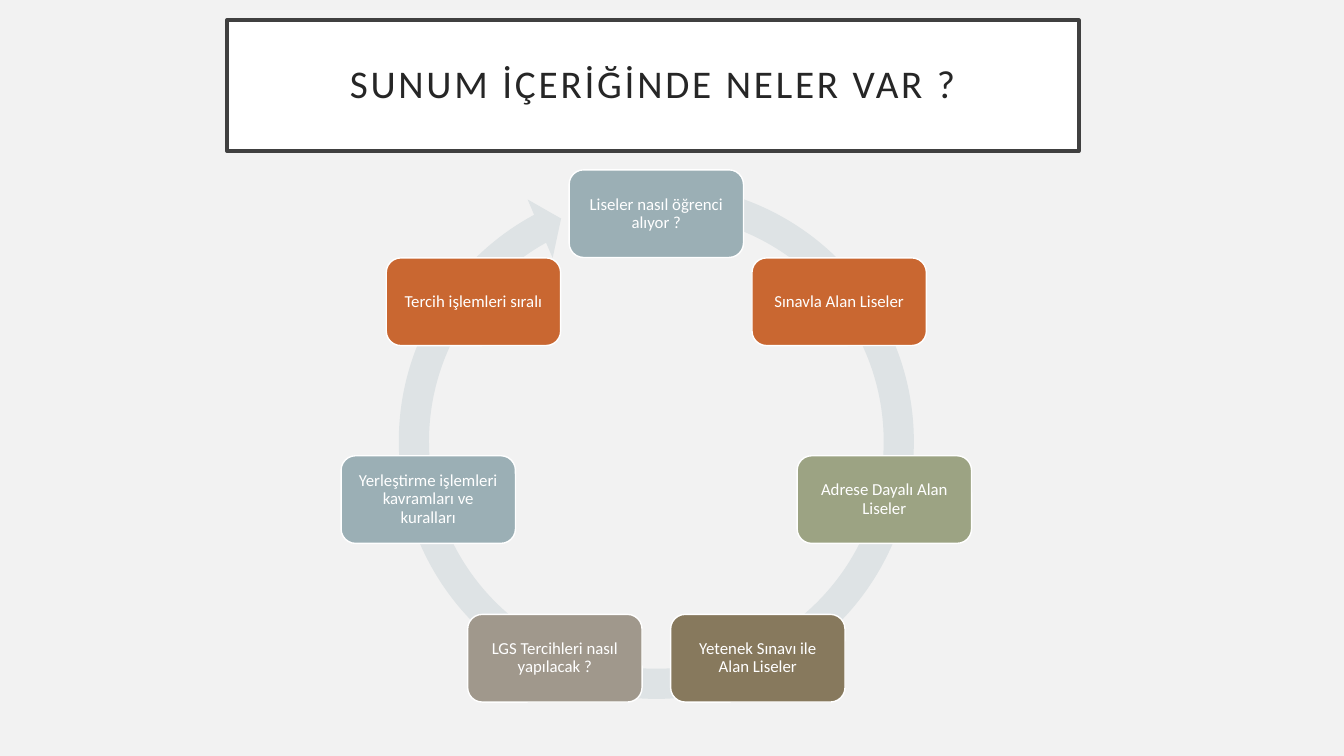
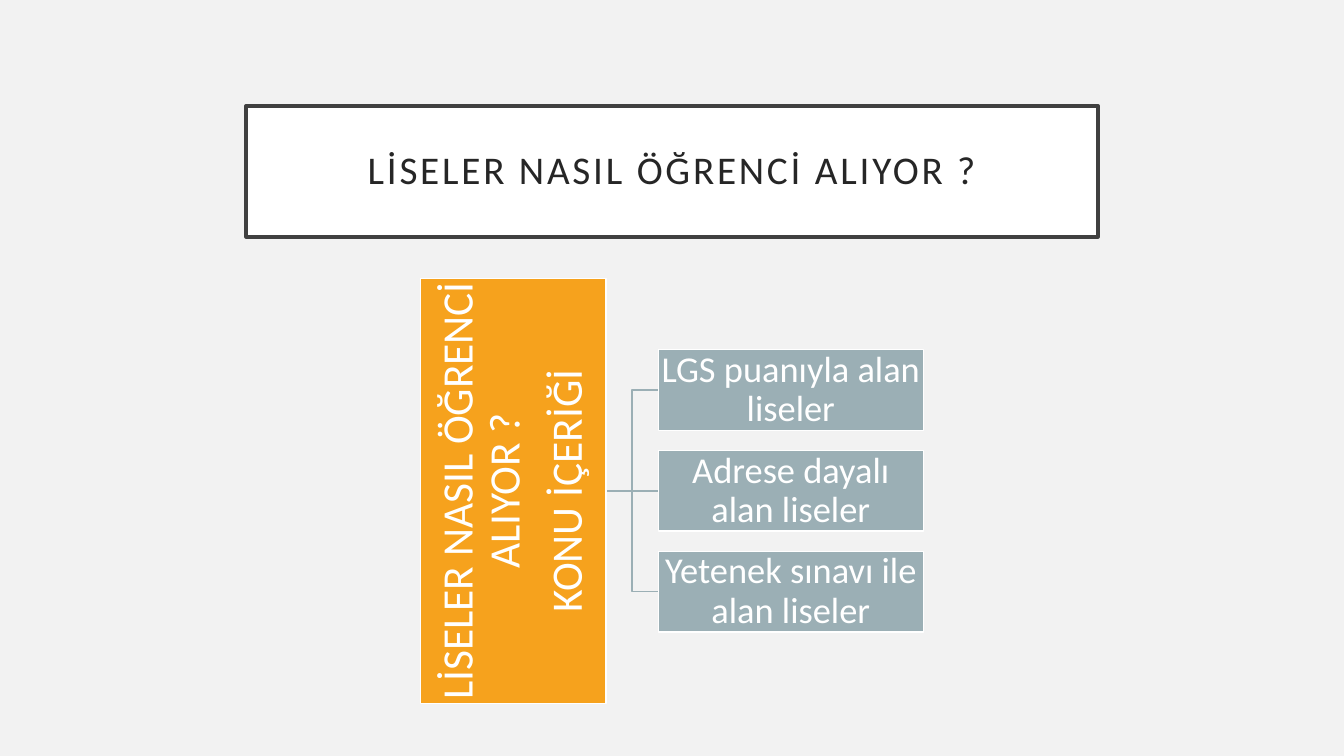
import math

from lxml import etree
from pptx import Presentation
from pptx.dml.color import RGBColor
from pptx.enum import shapes, text
from pptx.oxml import ns
from pptx.util import Inches, Pt

# Palette
PAPER = RGBColor(0xF2, 0xF2, 0xF2)
WHITE = RGBColor(0xFF, 0xFF, 0xFF)
FRAME = RGBColor(0x40, 0x40, 0x40)
INK = RGBColor(0x26, 0x26, 0x26)
RING = RGBColor(0xDE, 0xE3, 0xE5)
BLUE = RGBColor(0x9B, 0xAF, 0xB5)
RUST = RGBColor(0xC9, 0x67, 0x31)
SAGE = RGBColor(0x9C, 0xA3, 0x83)
BROWN = RGBColor(0x87, 0x79, 0x5D)
TAUPE = RGBColor(0xA0, 0x98, 0x8C)
AMBER = RGBColor(0xF6, 0xA2, 0x1D)


def apply_format(target, values):
    for name, value in values.items():
        setattr(target, name, value)


class Deck:
    FONT = "Calibri"
    TITLE_SIZE = (8.45, 1.3)

    def __init__(self):
        self.prs = Presentation()
        apply_format(self.prs, {"slide_width": Inches(13.33), "slide_height": Inches(7.5)})
        background = self.prs.slide_master.background.fill
        background.solid()
        background.fore_color.rgb = PAPER
        self.slide = None

    def paint(self, shape, fill, line=None, width=1):
        shape.fill.solid()
        shape.fill.fore_color.rgb = fill
        if line is None:
            shape.line.fill.background()
        else:
            shape.line.color.rgb = line
            shape.line.width = Pt(width)

    def set_text(self, shape, lines, size, color, inset, after=0.35):
        frame = shape.text_frame
        margins = ("margin_left", "margin_top", "margin_right", "margin_bottom")
        apply_format(frame, {
            "text": "\n".join(lines),
            "word_wrap": True,
            "auto_size": text.MSO_AUTO_SIZE.NONE,
            "vertical_anchor": text.MSO_ANCHOR.MIDDLE,
            **dict.fromkeys(margins, Inches(inset)),
        })
        for paragraph in frame.paragraphs:
            apply_format(paragraph, {
                "alignment": text.PP_ALIGN.CENTER,
                "line_spacing": 0.9,
                "space_before": Pt(0),
                "space_after": Pt(size * after),
            })
            for run in paragraph.runs:
                apply_format(run.font, {"name": self.FONT, "size": Pt(size)})
                run.font.color.rgb = color

    def new_slide(self, title, left, top):
        """Start a slide with its framed, letter-spaced title."""
        self.slide = self.prs.slides.add_slide(self.prs.slide_layouts[5])
        heading = self.slide.shapes.title
        width, height = self.TITLE_SIZE
        apply_format(heading, {"left": Inches(left), "top": Inches(top),
                               "width": Inches(width), "height": Inches(height)})
        self.paint(heading, WHITE, FRAME, 2.5)
        self.set_text(heading, [title], 28, INK, 0.2, after=0)
        for run in heading.text_frame.paragraphs[0].runs:
            run._r.get_or_add_rPr().set("spc", "200")

    def shape(self, kind, center, size, fill, line=None):
        (x, y), (width, height) = center, size
        item = self.slide.shapes.add_shape(
            kind, Inches(x - width / 2), Inches(y - height / 2),
            Inches(width), Inches(height))
        item.shadow.inherit = False
        self.paint(item, fill, line)
        return item

    def box(self, kind, center, size, fill, lines, font_size, inset, rotation=0):
        item = self.shape(kind, center, size, fill, WHITE)
        item.rotation = rotation
        self.set_text(item, lines, font_size, WHITE, inset)

    def ring_arrow(self, center, diameter, adjustments):
        ring = self.shape(shapes.MSO_SHAPE.CIRCULAR_ARROW, center,
                          (diameter, diameter), RING)
        for index, value in enumerate(adjustments):
            ring.adjustments[index] = value

    def link(self, start, end):
        """Join two points, with an elbow when their heights differ."""
        level = start[1] == end[1]
        kind = shapes.MSO_CONNECTOR.STRAIGHT if level else shapes.MSO_CONNECTOR.ELBOW
        line = self.slide.shapes.add_connector(
            kind, *(Inches(value) for value in (*start, *end)))
        line.line.color.rgb = BLUE
        line.line.width = Pt(1)
        etree.SubElement(line._element.spPr, ns.qn("a:effectLst"))


def add_contents(deck):
    deck.new_slide("SUNUM İÇERİĞİNDE NELER VAR ?", 2.25, 0.2)
    center_x, center_y, radius = 6.51, 4.44, 2.32
    topics = [
        ("Liseler nasıl öğrenci alıyor ?", BLUE),
        ("Sınavla Alan Liseler", RUST),
        ("Adrese Dayalı Alan Liseler", SAGE),
        ("Yetenek Sınavı ile Alan Liseler", BROWN),
        ("LGS Tercihleri nasıl yapılacak ?", TAUPE),
        ("Yerleştirme işlemleri kavramları ve kuralları", BLUE),
        ("Tercih işlemleri sıralı", RUST),
    ]

    # Ring behind the topics
    deck.ring_arrow((center_x, 4.38), 5.44, (0.055, 3.307, 144.813, 169.7, 0.058))

    # Topics clockwise from the top
    for index, (topic, color) in enumerate(topics):
        angle = math.tau * index / len(topics)
        center = (center_x + radius * math.sin(angle),
                  center_y - radius * math.cos(angle))
        deck.box(shapes.MSO_SHAPE.ROUNDED_RECTANGLE, center, (1.73, 0.87),
                 color, [topic], 12, 0.09)


def add_admission(deck):
    deck.new_slide("LİSELER NASIL ÖĞRENCİ ALIYOR ?", 2.44, 1.05)
    middle, root_x, root_edge = 4.87, 5.09, 6.01
    branch_left, branch_size, step = 6.53, (2.63, 0.8), 1.0
    branches = ["LGS puanıyla alan liseler", "Adrese dayalı alan liseler",
                "Yetenek sınavı ile alan liseler"]
    levels = [middle + step * (index - 1) for index in range(len(branches))]

    # Links from the root to its branches
    for level in levels:
        deck.link((root_edge, middle), (branch_left, level))

    # Upright root
    rectangle = shapes.MSO_SHAPE.RECTANGLE
    deck.box(rectangle, (root_x, middle), (4.22, 1.84), AMBER,
             ["LİSELER NASIL ÖĞRENCİ ALIYOR ?", "KONU İÇERİĞİ"], 31, 0.02, 270)

    # Branches
    for branch, level in zip(branches, levels):
        deck.box(rectangle, (branch_left + branch_size[0] / 2, level),
                 branch_size, BLUE, [branch], 26, 0.02)


def main():
    deck = Deck()
    add_contents(deck)
    add_admission(deck)
    deck.prs.save("out.pptx")


if __name__ == "__main__":
    main()
